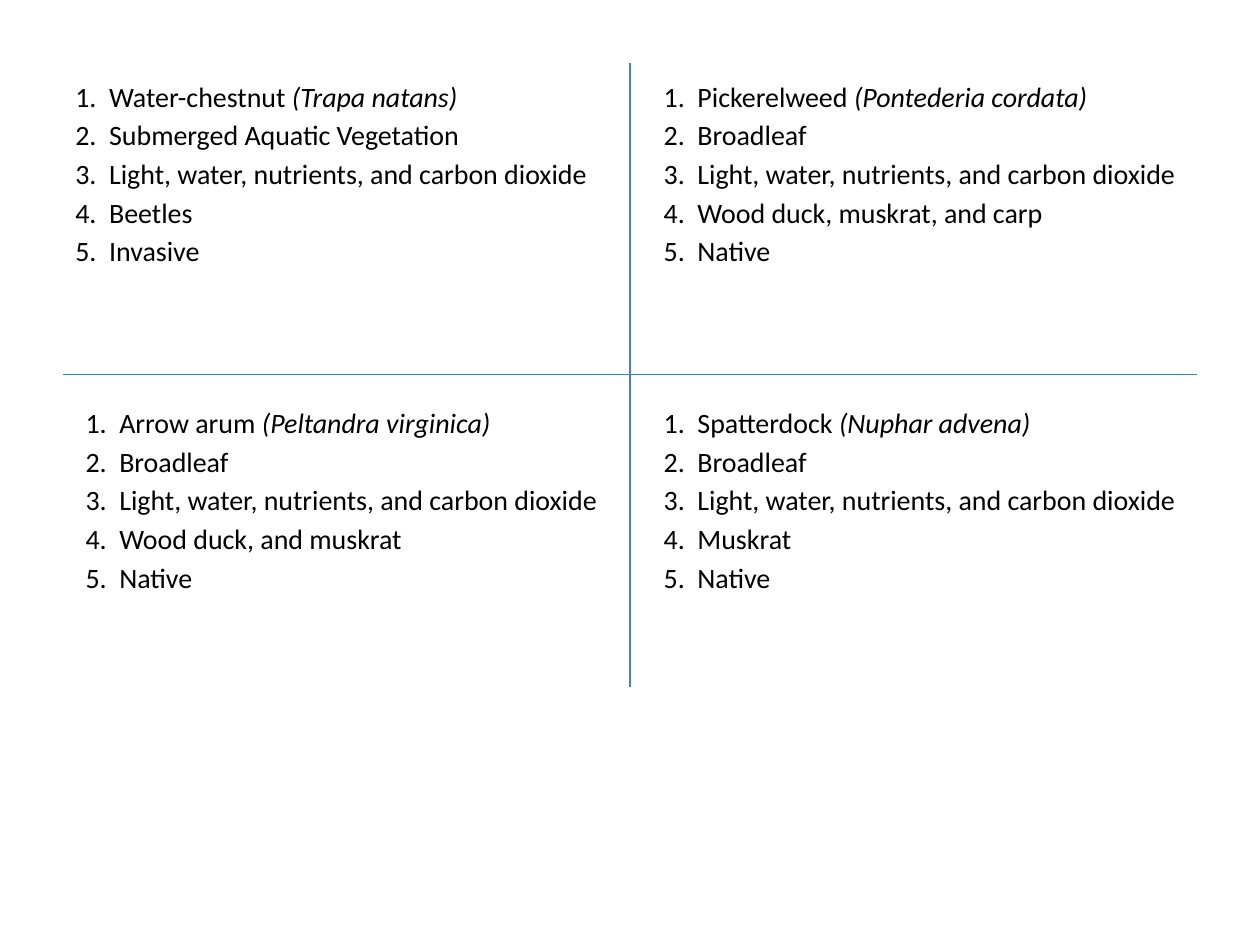
from lxml import etree
from pptx import Presentation
from pptx.dml.color import RGBColor
from pptx.enum import shapes, text
from pptx.oxml.ns import qn
from pptx.util import Pt

NEEDS = "Light, water, nutrients, and carbon dioxide"
BOX_W, BOX_H = 313.9, 119.5
LEFT, RIGHT, TOP, BOTTOM = 36, 372.2, 41.8, 228.2

# (left, top), common name, Latin name, type, food for, origin
PLANTS = [
    ((LEFT, TOP), "Water-chestnut", "Trapa natans",
     "Submerged Aquatic Vegetation", "Beetles", "Invasive"),
    ((RIGHT, TOP), "Pickerelweed", "Pontederia cordata",
     "Broadleaf", "Wood duck, muskrat, and carp", "Native"),
    ((LEFT + 5.8, BOTTOM), "Arrow arum", "Peltandra virginica",
     "Broadleaf", "Wood duck, and muskrat", "Native"),
    ((RIGHT, BOTTOM), "Spatterdock", "Nuphar advena",
     "Broadleaf", "Muskrat", "Native"),
]


def rgb(value):
    return RGBColor.from_string(value)


def add_run(p, content, size=16, color="000000", italic=False):
    r = p.add_run()
    r.text = content
    r.font.name = "Calibri"
    r.font.size = Pt(size)
    r.font.italic = italic
    r.font.color.rgb = rgb(color)


def add_rule(s, x1, y1, x2, y2, color="4B7EBC", width=0.75):
    line = s.shapes.add_connector(
        shapes.MSO_CONNECTOR.STRAIGHT, Pt(x1), Pt(y1), Pt(x2), Pt(y2))
    line.line.color.rgb = rgb(color)
    line.line.width = Pt(width)
    etree.SubElement(line._element.spPr, qn("a:effectLst"))


def add_plant(s, x, y, w, h, name, latin, *facts):
    tf = s.shapes.add_textbox(Pt(x), Pt(y), Pt(w), Pt(h)).text_frame
    tf.word_wrap = True
    tf.auto_size = text.MSO_AUTO_SIZE.SHAPE_TO_FIT_TEXT
    for i, fact in enumerate([name + " ", *facts], 1):
        p = tf.paragraphs[0] if i == 1 else tf.add_paragraph()
        p.space_before = Pt(2.9)
        # Hanging indent
        pPr = p._p.get_or_add_pPr()
        pPr.set("marL", str(Pt(27)))
        pPr.set("indent", str(Pt(-27)))
        add_run(p, f"{i}.  {fact}")
        if i == 1:
            add_run(p, f"({latin})", italic=True)


def main():
    prs = Presentation()
    prs.slide_width, prs.slide_height = Pt(720), Pt(540)
    s = prs.slides.add_slide(prs.slide_layouts[6])

    # Dividing cross
    add_rule(s, 360, 36, 360, 392.4)
    add_rule(s, 36, 214, 684, 214)

    # One plant in each quarter
    for (x, y), name, latin, kind, eaters, origin in PLANTS:
        add_plant(s, x, y, BOX_W, BOX_H, name, latin,
                  kind, NEEDS, eaters, origin)

    prs.save("out.pptx")


if __name__ == "__main__":
    main()
